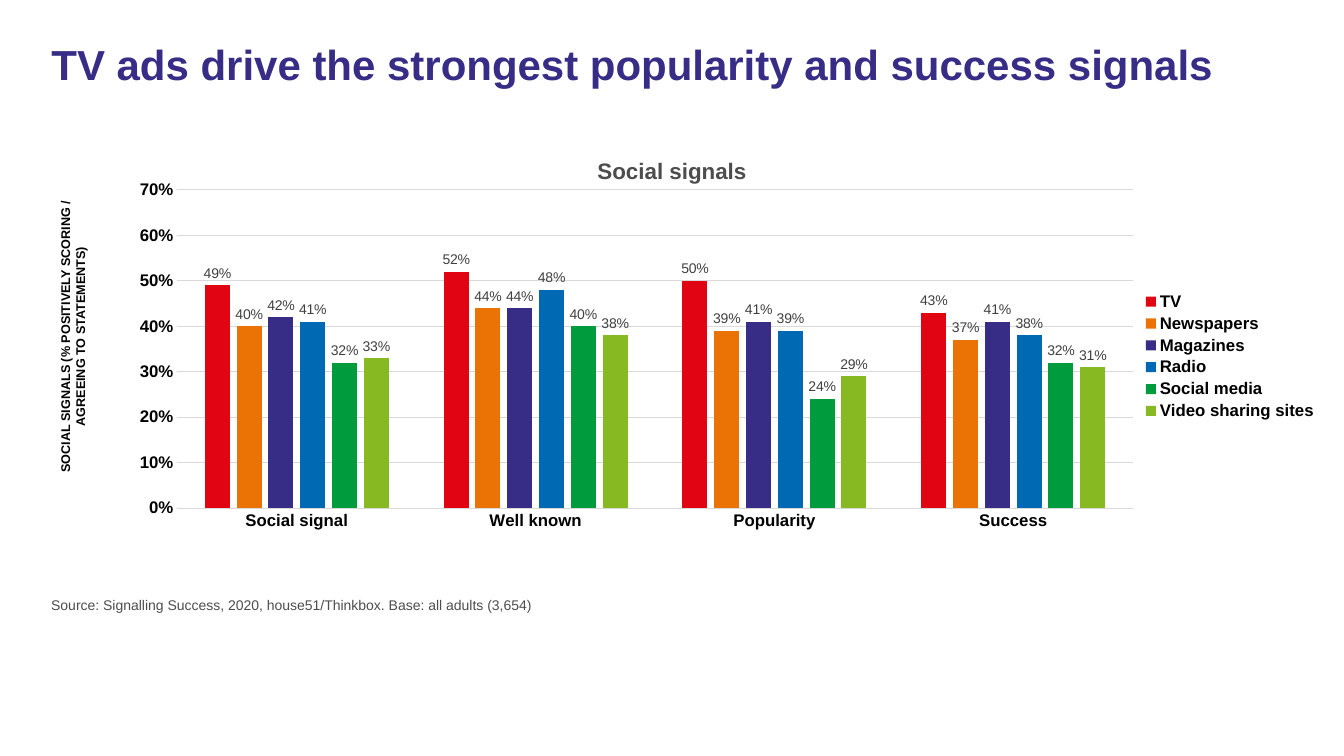
from lxml import etree
from pptx import Presentation
from pptx.chart.data import CategoryChartData
from pptx.dml.color import RGBColor
from pptx.enum.chart import XL_CHART_TYPE, XL_LABEL_POSITION, XL_LEGEND_POSITION, XL_TICK_MARK
from pptx.enum.text import MSO_ANCHOR, PP_ALIGN
from pptx.oxml.ns import qn
from pptx.util import Inches, Pt

# Content
TITLE = "TV ads drive the strongest popularity and success signals"
CHART_TITLE = "Social signals"
AXIS_TITLE = "SOCIAL SIGNALS (% POSITIVELY SCORING / AGREEING TO STATEMENTS)"
SOURCE = "Source: Signalling Success, 2020, house51/Thinkbox. Base: all adults (3,654)"
CATEGORIES = ["Social signal", "Well known", "Popularity", "Success"]
MEDIA = [
    ("TV", "E10514", (0.49, 0.52, 0.50, 0.43)),
    ("Newspapers", "EB7305", (0.40, 0.44, 0.39, 0.37)),
    ("Magazines", "372D87", (0.42, 0.44, 0.41, 0.41)),
    ("Radio", "0069B4", (0.41, 0.48, 0.39, 0.38)),
    ("Social media", "009B3C", (0.32, 0.40, 0.24, 0.32)),
    ("Video sharing sites", "87B923", (0.33, 0.38, 0.29, 0.31)),
]
PLOT_AREA = {"x": 0.098, "y": 0.131, "w": 0.749, "h": 0.706}
PURPLE, GREY, GRID, BLACK = "372D87", "4D4D4D", "D9D9D9", "000000"


def rgb(color):
    return RGBColor.from_string(color)


def set_font(font, size, color=BLACK, bold=False):
    font.name, font.size, font.bold = "Arial", Pt(size), bold
    font.color.rgb = rgb(color)


def set_line(line, color=GRID):
    line.color.rgb = rgb(color)
    line.width = Pt(0.75)


def write(sp, text, size, align=PP_ALIGN.LEFT, spacing=1.0, **style):
    tf = sp.text_frame
    tf.word_wrap = True
    tf.vertical_anchor = MSO_ANCHOR.TOP
    p = tf.paragraphs[0]
    p.alignment, p.line_spacing = align, spacing
    r = p.add_run()
    r.text = text
    set_font(r.font, size, **style)


def place(sp, *box):
    sp.left, sp.top, sp.width, sp.height = map(Inches, box)


def add_text(s, box, text, size, **style):
    sp = s.shapes.add_textbox(*map(Inches, box))
    write(sp, text, size, **style)
    return sp


def fix_plot_area(chart, area):
    """Pin the inner plot area to fractions of the chart frame."""
    plot_area = chart._chartSpace.chart.plotArea
    for old in plot_area.findall(qn("c:layout")):
        plot_area.remove(old)
    layout = etree.Element(qn("c:layout"))
    manual = etree.SubElement(layout, qn("c:manualLayout"))
    settings = {"layoutTarget": "inner", "xMode": "edge", "yMode": "edge", **area}
    for tag, val in settings.items():
        etree.SubElement(manual, qn(f"c:{tag}")).set("val", str(val))
    plot_area.insert(0, layout)


def add_signal_chart(s, box):
    data = CategoryChartData(number_format="0%")
    data.categories = CATEGORIES
    for name, _, values in MEDIA:
        data.add_series(name, values)
    chart = s.shapes.add_chart(
        XL_CHART_TYPE.COLUMN_CLUSTERED, *map(Inches, box), data).chart
    set_font(chart.font, 10)
    chart.has_title = False
    fix_plot_area(chart, PLOT_AREA)

    # Columns and their labels
    plot = chart.plots[0]
    plot.gap_width, plot.overlap, plot.vary_by_categories = 219, -27, False
    for series, (_, color, _) in zip(plot.series, MEDIA):
        series.format.fill.solid()
        series.format.fill.fore_color.rgb = rgb(color)
        labels = series.data_labels
        labels.show_value = True
        labels.number_format, labels.number_format_is_linked = "0%", False
        labels.position = XL_LABEL_POSITION.OUTSIDE_END
        set_font(labels.font, 10, "404040")

    # Axes
    cat, val = chart.category_axis, chart.value_axis
    for axis in (cat, val):
        axis.major_tick_mark = axis.minor_tick_mark = XL_TICK_MARK.NONE
        set_font(axis.tick_labels.font, 12, bold=True)
    set_line(cat.format.line)
    val.format.line.fill.background()
    val.minimum_scale, val.maximum_scale, val.major_unit = 0, 0.7, 0.1
    val.tick_labels.number_format = "0%"
    val.tick_labels.number_format_is_linked = False
    val.has_major_gridlines = True
    set_line(val.major_gridlines.format.line)

    # Legend
    chart.has_legend = True
    chart.legend.position = XL_LEGEND_POSITION.RIGHT
    chart.legend.include_in_layout = False
    set_font(chart.legend.font, 12, bold=True)


def main():
    prs = Presentation()
    prs.slide_width, prs.slide_height = Inches(13.33), Inches(7.5)
    s = prs.slides.add_slide(prs.slide_layouts[5])

    # Title and source
    place(s.shapes.title, 0.41, 0.39, 12.4, 1.12)
    write(s.shapes.title, TITLE, 30, spacing=0.9, color=PURPLE, bold=True)
    add_text(s, (0.41, 5.87, 12.4, 0.33), SOURCE, 10, color=GREY)

    # Chart with its two headings
    add_signal_chart(s, (0.52, 1.3, 12.65, 4.47))
    axis_title = add_text(s, (-0.89, 3.06, 3.38, 0.56), AXIS_TITLE, 9,
                          align=PP_ALIGN.CENTER, bold=True)
    axis_title.rotation = 270
    add_text(s, (5.22, 1.51, 2.89, 0.37), CHART_TITLE, 16,
             align=PP_ALIGN.CENTER, color=GREY, bold=True)
    prs.save("out.pptx")


if __name__ == "__main__":
    main()
